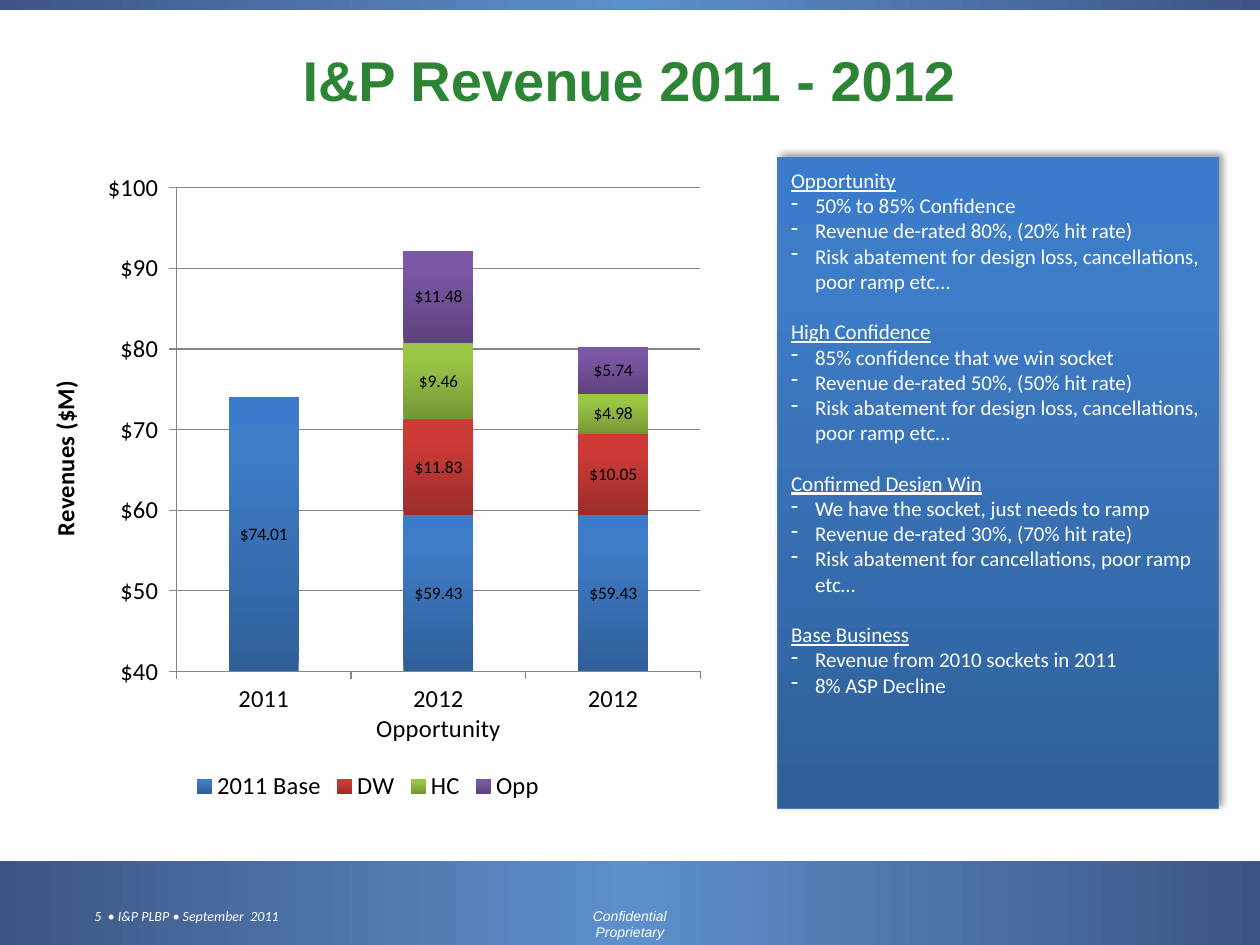
from typing import NamedTuple

from lxml.etree import SubElement
from pptx import Presentation
from pptx.chart.data import CategoryChartData
from pptx.dml.color import RGBColor
from pptx.enum.chart import XL_CHART_TYPE, XL_LABEL_POSITION, XL_LEGEND_POSITION, XL_TICK_MARK
from pptx.enum.shapes import MSO_SHAPE
from pptx.enum.text import MSO_ANCHOR, PP_ALIGN
from pptx.oxml import parse_xml
from pptx.oxml.ns import nsdecls, qn
from pptx.util import Inches, Pt

WHITE = RGBColor(0xFF, 0xFF, 0xFF)
BLACK = RGBColor(0x00, 0x00, 0x00)
GREEN = RGBColor(0x2D, 0x84, 0x35)
GRID = RGBColor(0x86, 0x86, 0x86)
PANEL_LINE = RGBColor(0x4B, 0x7E, 0xBC)
BAND_EDGE = RGBColor(0x3D, 0x55, 0x84)
BAND_MID = RGBColor(0x5C, 0x90, 0xCC)
BLUE_DARK = RGBColor(0x2F, 0x5F, 0x99)
BLUE = RGBColor(0x3D, 0x7C, 0xC7)
BLUE_TOP = RGBColor(0x3A, 0x7C, 0xCB)
RED_DARK = RGBColor(0x9B, 0x2D, 0x2A)
RED = RGBColor(0xCE, 0x3B, 0x37)
LIME_DARK = RGBColor(0x76, 0x97, 0x35)
LIME = RGBColor(0x9B, 0xC5, 0x45)
PURPLE_DARK = RGBColor(0x5D, 0x43, 0x7E)
PURPLE = RGBColor(0x7B, 0x57, 0xA5)

BAND_STOPS = [(0, BAND_EDGE), (50, BAND_MID), (100, BAND_EDGE)]
BLUE_STOPS = [(0, BLUE_DARK), (80, BLUE), (100, BLUE_TOP)]


class Box(NamedTuple):
    left: float
    top: float
    width: float
    height: float

    def emu(self) -> list:
        return [Inches(v) for v in self]


class Label(NamedTuple):
    box: Box
    text: str
    color: RGBColor
    fmt: dict
    align: PP_ALIGN = PP_ALIGN.LEFT
    anchor: MSO_ANCHOR = MSO_ANCHOR.TOP


class Series(NamedTuple):
    name: str
    values: tuple
    stops: list


class Topic(NamedTuple):
    heading: str
    points: list


BANDS = [Box(0, 6.83, 10, 0.67), Box(0, 0, 10, 0.08)]
CHART = Box(0.17, 1.27, 5.5, 5.13)
PLOT = Box(1.4, 1.49, 4.16, 3.84)

LABELS = [
    Label(Box(0.65, 7.15, 2.66, 0.23), "5  • I&P PLBP • September  2011", WHITE,
          {"name": "Calibri", "size": Pt(8), "italic": True}),
    Label(Box(4.32, 7.15, 1.36, 0.23), "Confidential\vProprietary", WHITE,
          {"name": "Arial", "size": Pt(8), "italic": True}, PP_ALIGN.CENTER),
    Label(Box(0.08, 0.25, 9.83, 0.75), "I&P Revenue 2011 - 2012", GREEN,
          {"name": "Arial", "size": Pt(32), "bold": True}, PP_ALIGN.CENTER, MSO_ANCHOR.MIDDLE),
]

CATEGORIES = ["2011", "2012 Opportunity", "2012"]
SERIES = [
    Series("2011 Base", (74.01, 59.43, 59.43), BLUE_STOPS),
    Series("DW", (0, 11.83, 10.05), [(0, RED_DARK), (80, RED), (100, RED)]),
    Series("HC", (0, 9.46, 4.98), [(0, LIME_DARK), (80, LIME), (100, LIME)]),
    Series("Opp", (0, 11.48, 5.74), [(0, PURPLE_DARK), (80, PURPLE), (100, PURPLE)]),
]

DESIGN_RISK = "Risk abatement for design loss, cancellations, poor ramp etc…"
TOPICS = [
    Topic("Opportunity", ["50% to 85% Confidence",
                          "Revenue de-rated 80%, (20% hit rate)", DESIGN_RISK]),
    Topic("High Confidence", ["85% confidence that we win socket",
                              "Revenue de-rated 50%, (50% hit rate)", DESIGN_RISK]),
    Topic("Confirmed Design Win", ["We have the socket, just needs to ramp",
                                   "Revenue de-rated 30%, (70% hit rate)",
                                   "Risk abatement for cancellations, poor ramp etc…"]),
    Topic("Base Business", ["Revenue from 2010 sockets in 2011", "8% ASP Decline"]),
]


def apply(obj, fmt: dict) -> None:
    for key, value in fmt.items():
        setattr(obj, key, value)


def set_font(font, color: RGBColor, fmt: dict) -> None:
    apply(font, fmt)
    font.color.rgb = color


def accounting(digits: str) -> str:
    return rf'_("$"* {digits}_);_("$"* \({digits}\);_("$"* "-"??_);_(@_)'


def set_gradient(fill, element, stops: list, angle: int) -> None:
    fill.gradient()
    fill.gradient_angle = angle
    gs_list = next(element.iter(qn("a:gsLst")))
    for gs in list(gs_list):
        gs_list.remove(gs)
    for pos, color in stops:
        gs = SubElement(gs_list, qn("a:gs"), pos=str(pos * 1000))
        SubElement(gs, qn("a:srgbClr"), val=str(color))


def add_rect(shapes, box: Box, stops: list, angle: int):
    sp = shapes.add_shape(MSO_SHAPE.RECTANGLE, *box.emu())
    sp.shadow.inherit = False
    set_gradient(sp.fill, sp._element, stops, angle)
    sp.line.fill.background()
    return sp


def add_label(shapes, label: Label) -> None:
    tf = shapes.add_textbox(*label.box.emu()).text_frame
    apply(tf, {"word_wrap": True, "vertical_anchor": label.anchor})
    p = tf.paragraphs[0]
    p.text = label.text
    p.alignment = label.align
    for r in p.runs:
        set_font(r.font, label.color, label.fmt)


def add_panel(shapes) -> None:
    group = shapes.add_group_shape().shapes
    sp = add_rect(group, Box(6.17, 1.25, 3.5, 5.17), BLUE_STOPS, 90)
    sp.line.color.rgb = PANEL_LINE
    sp.line.width = Pt(0.75)
    effects = sp._element.spPr.find(qn("a:effectLst"))
    effects.append(parse_xml(
        f'<a:outerShdw {nsdecls("a")} blurRad="{Pt(4)}" dist="{Pt(3)}" dir="18900000" '
        'rotWithShape="0"><a:srgbClr val="000000"><a:alpha val="40000"/></a:srgbClr></a:outerShdw>'))

    tf = group.add_textbox(*Box(6.18, 1.28, 3.49, 4.34).emu()).text_frame
    tf.word_wrap = True
    for i, topic in enumerate(TOPICS):
        p = tf.add_paragraph() if i else tf.paragraphs[0]
        if i:
            p.space_before = Pt(14.5)
        add_line(p, topic.heading, True)
        for point in topic.points:
            p = tf.add_paragraph()
            pPr = p._p.get_or_add_pPr()
            pPr.set("marL", str(Inches(0.19)))
            pPr.set("indent", str(-Inches(0.19)))
            SubElement(pPr, qn("a:buChar"), char="-")
            add_line(p, point, False)


def add_line(p, text: str, underline: bool) -> None:
    r = p.add_run()
    r.text = text
    set_font(r.font, WHITE, {"name": "Calibri", "size": Pt(12), "underline": underline})


def add_revenue_chart(shapes) -> None:
    data = CategoryChartData()
    data.categories = CATEGORIES
    for series in SERIES:
        data.add_series(series.name, series.values)
    chart = shapes.add_chart(XL_CHART_TYPE.COLUMN_STACKED, *CHART.emu(), data).chart
    set_font(chart.font, BLACK, {"name": "Calibri", "size": Pt(14)})
    apply(chart, {"has_title": False, "has_legend": True})
    apply(chart.legend, {"position": XL_LEGEND_POSITION.BOTTOM, "include_in_layout": False})

    # Columns, with no label on a zero value
    plot = chart.plots[0]
    apply(plot, {"gap_width": 150, "overlap": 100, "vary_by_categories": False})
    for item, series in zip(plot.series, SERIES):
        set_gradient(item.format.fill, item._element, series.stops, 90)
        labels = item.data_labels
        apply(labels, {"show_value": True, "number_format": accounting("#,##0.00"),
                       "number_format_is_linked": False, "position": XL_LABEL_POSITION.CENTER})
        set_font(labels.font, BLACK, {"name": "Calibri", "size": Pt(10)})
        if series.values[0] == 0:
            labels._element.insert(0, parse_xml(
                f'<c:dLbl {nsdecls("c")}><c:idx val="0"/><c:delete val="1"/></c:dLbl>'))

    # Axes
    axis = chart.value_axis
    apply(axis, {"minimum_scale": 40, "maximum_scale": 100, "major_unit": 10,
                 "has_major_gridlines": True, "has_title": True})
    apply(axis.tick_labels, {"number_format": accounting("#,##0"),
                             "number_format_is_linked": False})
    tf = axis.axis_title.text_frame
    tf.text = "Revenues ($M)"
    tf._txBody.bodyPr.set("rot", "-5400000")
    set_font(tf.paragraphs[0].runs[0].font, BLACK,
             {"name": "Calibri", "size": Pt(14), "bold": True})
    for ax in (axis, chart.category_axis):
        ax.major_tick_mark = XL_TICK_MARK.OUTSIDE
    for line in (axis.format.line, chart.category_axis.format.line, axis.major_gridlines.format.line):
        line.color.rgb = GRID
        line.width = Pt(0.75)

    # Inner plot area, as fractions of the chart
    area = next(chart._chartSpace.iter(qn("c:plotArea")))
    for old in area.findall(qn("c:layout")):
        area.remove(old)
    layout = parse_xml(f'<c:layout {nsdecls("c")}><c:manualLayout/></c:layout>')
    for tag, value in {"layoutTarget": "inner", "xMode": "edge", "yMode": "edge",
                       "x": (PLOT.left - CHART.left) / CHART.width,
                       "y": (PLOT.top - CHART.top) / CHART.height,
                       "w": PLOT.width / CHART.width,
                       "h": PLOT.height / CHART.height}.items():
        SubElement(layout[0], qn(f"c:{tag}"), val=str(value))
    area.insert(0, layout)


def main() -> None:
    prs = Presentation()
    prs.slide_width, prs.slide_height = Inches(10), Inches(7.5)
    shapes = prs.slides.add_slide(prs.slide_layouts[6]).shapes

    # Bands, footer and title
    for box in BANDS:
        add_rect(shapes, box, BAND_STOPS, 0)
    for label in LABELS:
        add_label(shapes, label)

    # Definitions and chart
    add_panel(shapes)
    add_revenue_chart(shapes)
    prs.save("out.pptx")


if __name__ == "__main__":
    main()
